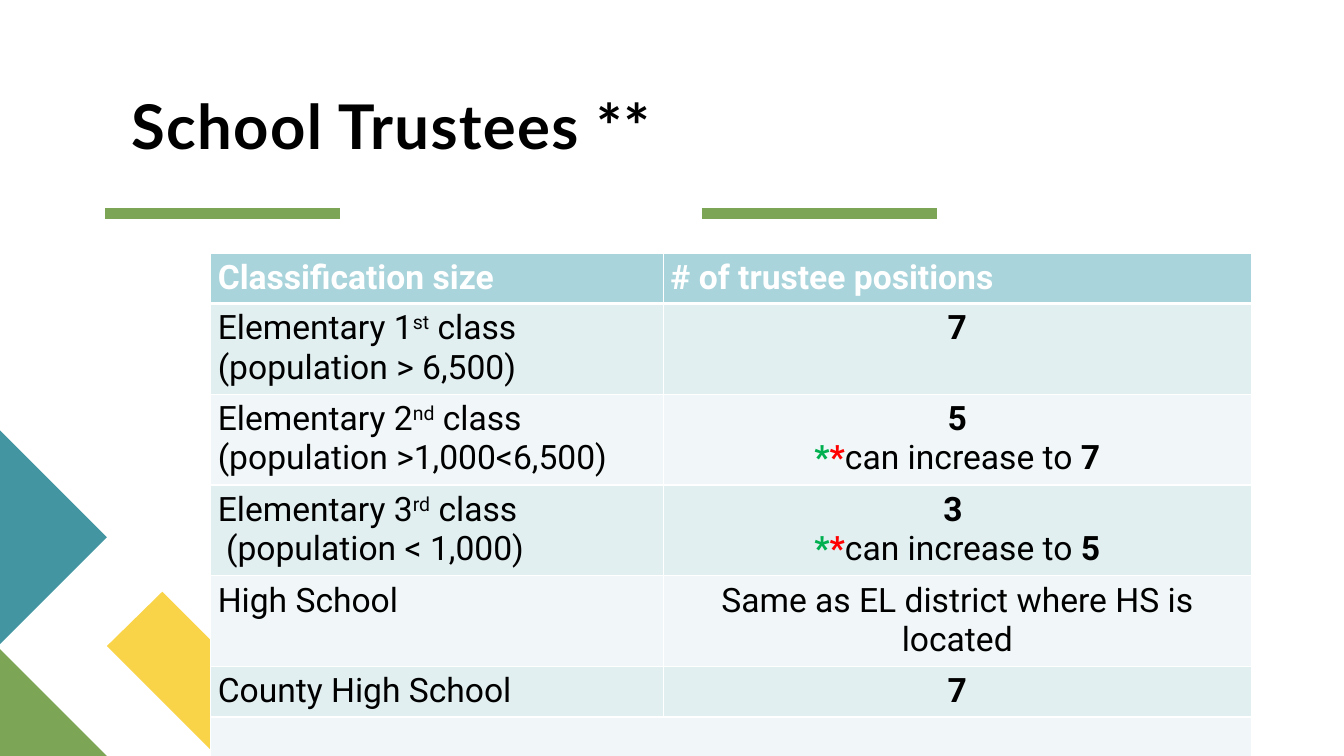
from typing import NamedTuple

from lxml import etree
from pptx import Presentation
from pptx import util as u
from pptx.dml.color import RGBColor
from pptx.enum import shapes, text
from pptx.oxml import ns

WIDE, HIGH = u.Inches(13.33), u.Inches(7.5)
BLACK, WHITE, LEAF, TEAL, GOLD = "000000", "FFFFFF", "7CA655", "4495A2", "F9D448"
HEAD, BANDS = "A9D4DB", ("E2EFF1", "F1F7F8")


class Bit(NamedTuple):
    words: str
    bold: bool = False
    hue: str = BLACK
    lift: int = 0  # superscript, in percent


class Patch(NamedTuple):
    hue: str
    spots: list[tuple[float, float]]


Lines = list[list[Bit]]


# Lengths are percentages of the slide's width and height
def across(share: float) -> int:
    return round(WIDE * share / 100)


def down(share: float) -> int:
    return round(HIGH * share / 100)


def tint(code: str) -> RGBColor:
    return RGBColor.from_string(code)


def draw_patch(slide, patch: Patch) -> None:
    spots = [(across(x), down(y)) for x, y in patch.spots]
    pen = slide.shapes.build_freeform(*spots[0])
    pen.add_line_segments(spots[1:])
    shape = pen.convert_to_shape()
    shape.shadow.inherit = False
    shape.fill.solid()
    shape.fill.fore_color.rgb = tint(patch.hue)
    shape.line.fill.background()


def draw_bar(slide, left: float) -> None:
    top = down(28.27)
    bar = slide.shapes.add_connector(
        shapes.MSO_CONNECTOR.STRAIGHT, across(left), top, across(left + 17.52), top)
    bar.line.color.rgb = tint(LEAF)
    bar.line.width = u.Pt(8)
    etree.SubElement(bar._element.spPr, ns.qn("a:effectLst"))


def style(run, face: str, size: float, bold: bool, hue: str) -> None:
    font = run.font
    font.name, font.size, font.bold = face, u.Pt(size), bold
    font.color.rgb = tint(hue)


def write(frame, lines: Lines, align) -> None:
    for i, bits in enumerate(lines):
        para = frame.paragraphs[0] if i == 0 else frame.add_paragraph()
        para.alignment = align
        for bit in bits:
            run = para.add_run()
            run.text = bit.words
            style(run, "Roboto", 24, bit.bold, bit.hue)
            if bit.lift:
                run._r.get_or_add_rPr().set("baseline", str(bit.lift * 1000))


def paint(cell, hue: str, base: float) -> None:
    props = cell._tc.get_or_add_tcPr()
    for side, width in (("L", 1), ("R", 1), ("T", 1), ("B", base)):
        edge = etree.SubElement(props, ns.qn(f"a:ln{side}"), w=str(u.Pt(width)))
        fill = etree.SubElement(edge, ns.qn("a:solidFill"))
        etree.SubElement(fill, ns.qn("a:srgbClr"), val=WHITE)
    cell.fill.solid()
    cell.fill.fore_color.rgb = tint(hue)
    cell.margin_left = cell.margin_right = u.Inches(0.07)
    cell.margin_top = cell.margin_bottom = u.Inches(0.05)


# Table wording
def grade(rank: str, end: str, size: str) -> Lines:
    return [[Bit(f"Elementary {rank}"), Bit(end, lift=30), Bit(" class")], [Bit(size)]]


def seats(count: str, most: str = "") -> Lines:
    lines = [[Bit(count, True)]]
    if most:
        lines.append([Bit("*", True, "00B050"), Bit("*", True, "FF0000"),
                      Bit("can increase to "), Bit(most, True)])
    return lines


ROWS: list[tuple[float, Lines, Lines]] = [
    (6.5, [[Bit("Classification size", True, WHITE)]],
     [[Bit("# of trustee positions", True, WHITE)]]),
    (11.8, grade("1", "st", "(population > 6,500)"), seats("7")),
    (11.8, grade("2", "nd", "(population >1,000<6,500)"), seats("5", "7")),
    (11.8, grade("3", "rd", " (population < 1,000)"), seats("3 ", "5")),
    (11.8, [[Bit("High School")]], [[Bit("Same as EL district where HS is located")]]),
    (6.5, [[Bit("County High School")]], seats("7")),
    (5.2, [], []),
]
COLS = (33.68, 43.74)

PATCHES = [
    Patch(GOLD, [(24.31, 100), (16.13, 100), (7.95, 85.47), (12.08, 78.27)]),
    Patch(LEAF, [(7.95, 100), (0, 100), (0, 85.87)]),
    Patch(TEAL, [(0, 56.93), (7.95, 71.07), (0, 85.2)]),
]


def draw_title(slide) -> None:
    box = slide.shapes.add_textbox(across(9.75), down(14.4), across(74.49), down(7.2))
    frame = box.text_frame
    frame.word_wrap = True
    frame.vertical_anchor = text.MSO_ANCHOR.BOTTOM
    frame.margin_left = frame.margin_right = frame.margin_top = frame.margin_bottom = 0
    frame.text = "School Trustees **"
    para = frame.paragraphs[0]
    para.line_spacing = 0.9
    run = para.runs[0]
    style(run, "Lato", 44, True, BLACK)
    run._r.get_or_add_rPr().set("spc", "100")


def draw_table(slide) -> None:
    grid = slide.shapes.add_table(
        len(ROWS), len(COLS), across(15.68), down(33.47),
        across(sum(COLS)), down(sum(row[0] for row in ROWS))).table
    for col, share in zip(grid.columns, COLS):
        col.width = across(share)
    for r, (tall, *cells) in enumerate(ROWS):
        grid.rows[r].height = down(tall)
        for c, lines in enumerate(cells):
            cell = grid.cell(r, c)
            paint(cell, BANDS[(r - 1) % 2] if r else HEAD, 1 if r else 3)
            middle = r > 0 and c == 1
            write(cell.text_frame, lines,
                  text.PP_ALIGN.CENTER if middle else text.PP_ALIGN.LEFT)
    last = len(ROWS) - 1
    grid.cell(last, 0).merge(grid.cell(last, 1))


def main() -> None:
    deck = Presentation()
    deck.slide_width, deck.slide_height = WIDE, HIGH
    slide = deck.slides.add_slide(deck.slide_layouts[6])
    # Corner shapes and green bars
    for patch in PATCHES:
        draw_patch(slide, patch)
    for left in (7.8, 52.21):
        draw_bar(slide, left)
    # Content
    draw_title(slide)
    draw_table(slide)
    deck.save("out.pptx")


if __name__ == "__main__":
    main()
